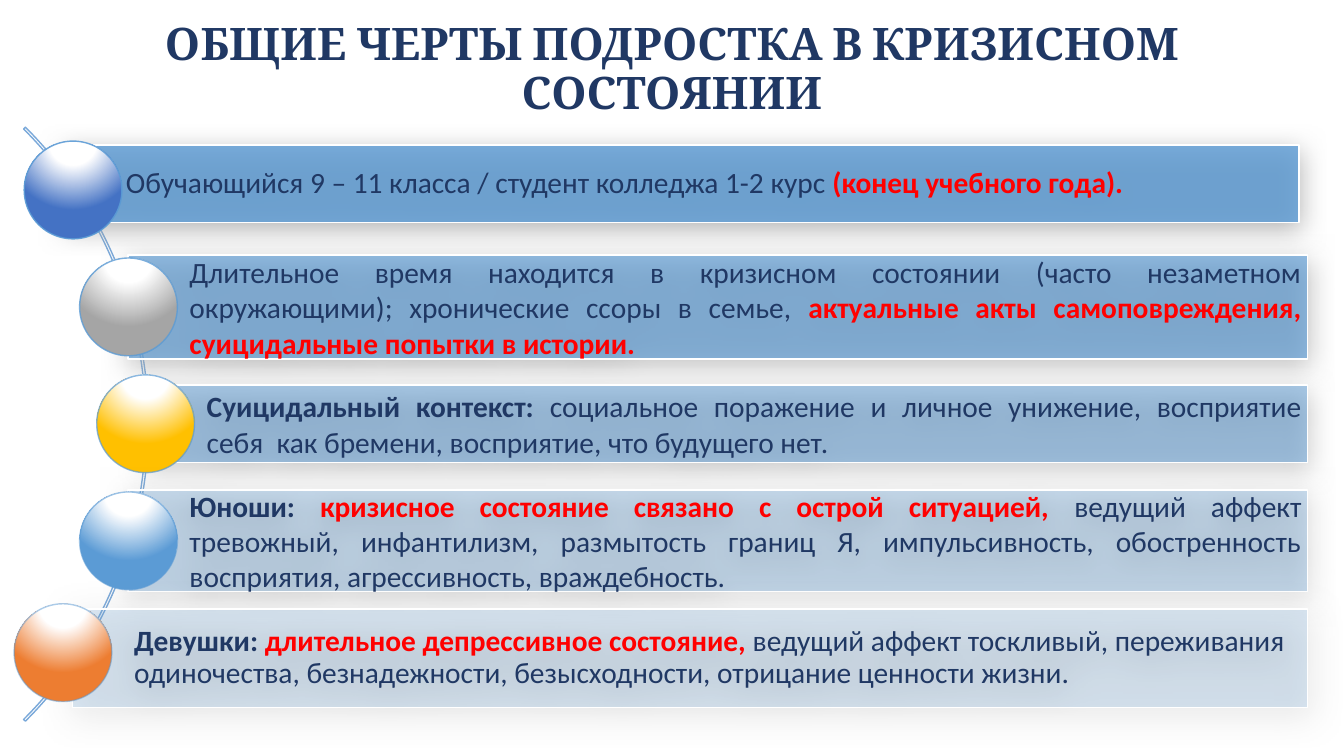
from dataclasses import dataclass

from pptx import Presentation
from pptx.dml.color import RGBColor
from pptx.enum.shapes import MSO_SHAPE
from pptx.enum.text import MSO_ANCHOR, MSO_AUTO_SIZE, PP_ALIGN
from pptx.oxml import parse_xml
from pptx.oxml.ns import nsdecls, qn
from pptx.shapes.autoshape import Shape
from pptx.slide import Slide
from pptx.util import Pt


@dataclass(frozen=True)
class Theme:
    ink: str = "203864"
    edge: str = "333F50"
    hot: str = "FF0000"
    blue: str = "5B9BD5"
    arc: str = "7AA9DA"
    white: str = "FFFFFF"
    shade: str = "A6A6A6"
    head: str = "Cambria"
    body: str = "Calibri"
    big: float = 32
    small: float = 21


@dataclass(frozen=True)
class Piece:
    text: str
    bold: bool = False
    hot: bool = False


@dataclass(frozen=True)
class Trait:
    bar: tuple[float, float, float, float]
    ball: tuple[float, float]
    color: str
    alpha: int
    blur: float
    full: bool
    words: tuple[Piece, ...]


LOOK = Theme()
BALL = 69.84
TRAITS = (
    Trait((46, 103.7, 882, 55.4), (17.3, 100.8), "4472C4", 80, 19, False, (
        Piece("Обучающийся 9 – 11 класса / студент колледжа 1-2 курс "),
        Piece("(конец учебного года).", True, True))),
    Trait((91.4, 182.2, 842.4, 74.2), (56.9, 184.3), "A5A5A5", 65, 19, True, (
        Piece("Длительное время находится в кризисном состоянии (часто незаметном "
              "окружающими); хронические ссоры в семье, "),
        Piece("актуальные акты самоповреждения, суицидальные попытки в истории.",
              True, True))),
    Trait((103.7, 275, 830.2, 55.4), (69.1, 267.8), "FFC000", 50, 19, True, (
        Piece("Суицидальный контекст: ", True),
        Piece("социальное поражение и личное унижение, восприятие себя  как бремени, "
              "восприятие, что будущего нет."))),
    Trait((91.4, 349.9, 842.4, 72.7), (56.9, 351.4), "5B9BD5", 30, 20, True, (
        Piece("Юноши: ", True),
        Piece("кризисное состояние связано с острой ситуацией, ", True, True),
        Piece("ведущий аффект тревожный, инфантилизм, размытость границ Я, "
              "импульсивность, обостренность восприятия, агрессивность, враждебность."))),
    Trait((51.8, 434.9, 882, 70.6), (10.1, 431.3), "ED7D31", 20, 25, False, (
        Piece("Девушки: ", True),
        Piece("длительное депрессивное состояние, ", True, True),
        Piece("ведущий аффект тоскливый, переживания одиночества, безнадежности, "
              "безысходности, отрицание ценности жизни."))),
)


def apply(target: object, form: dict) -> None:
    for name, value in form.items():
        setattr(target, name, value)


def rgb(code: str) -> RGBColor:
    return RGBColor.from_string(code)


def fade(fill, alpha: int) -> None:
    """Set the opacity, in percent, of a solid fill."""
    tone = fill._xPr.find(qn("a:solidFill"))[0]
    tone.append(parse_xml(f'<a:alpha {nsdecls("a")} val="{alpha * 1000}"/>'))


def add_run(para, piece: Piece, face: str, size: float) -> None:
    run = para.add_run()
    run.text = piece.text
    apply(run.font, {"name": face, "size": Pt(size), "bold": piece.bold})
    run.font.color.rgb = rgb(LOOK.hot if piece.hot else LOOK.ink)
    if not piece.hot:
        run.font._element.insert(0, parse_xml(
            f'<a:ln {nsdecls("a")} w="9525"><a:solidFill>'
            f'<a:srgbClr val="{LOOK.edge}"/></a:solidFill></a:ln>'))


def add_form(slide: Slide, kind: MSO_SHAPE, box: tuple, line: str) -> Shape:
    shape = slide.shapes.add_shape(kind, *map(Pt, box))
    shape.shadow.inherit = False
    shape.line.color.rgb = rgb(line)
    shape.line.width = Pt(1)
    return shape


def add_bar(slide: Slide, trait: Trait) -> None:
    bar = add_form(slide, MSO_SHAPE.RECTANGLE, trait.bar, LOOK.white)
    bar.fill.solid()
    bar.fill.fore_color.rgb = rgb(LOOK.blue)
    fade(bar.fill, trait.alpha)
    bar._element.spPr.find(qn("a:effectLst")).append(parse_xml(
        f'<a:outerShdw {nsdecls("a")} blurRad="{Pt(trait.blur)}" dist="{Pt(4)}" '
        f'dir="5400000" rotWithShape="0"><a:srgbClr val="{LOOK.shade}"/></a:outerShdw>'))
    apply(bar.text_frame, {
        "word_wrap": True, "vertical_anchor": MSO_ANCHOR.MIDDLE,
        "margin_left": Pt(44), "margin_right": Pt(4.2),
        "margin_top": Pt(4.2), "margin_bottom": Pt(4.2)})
    para = bar.text_frame.paragraphs[0]
    apply(para, {"alignment": PP_ALIGN.JUSTIFY if trait.full else PP_ALIGN.LEFT,
                 "line_spacing": 1.0 if trait.full else 0.9})
    for piece in trait.words:
        add_run(para, piece, LOOK.body, LOOK.small)


def add_ball(slide: Slide, trait: Trait, alpha: int) -> None:
    ball = add_form(slide, MSO_SHAPE.OVAL, (*trait.ball, BALL, BALL), LOOK.blue)
    fade(ball.line.fill, alpha)
    stops = ((0, LOOK.white), (35, LOOK.white), (100, trait.color))
    marks = "".join(f'<a:gs pos="{pos * 1000}"><a:srgbClr val="{code}"/></a:gs>'
                    for pos, code in stops)
    ball._element.spPr.find(qn("a:prstGeom")).addnext(parse_xml(
        f'<a:gradFill {nsdecls("a")} rotWithShape="1"><a:gsLst>{marks}</a:gsLst>'
        '<a:path path="circle"><a:fillToRect l="50000" t="-80000" r="50000" b="180000"/>'
        '</a:path></a:gradFill>'))


def add_title(slide: Slide) -> None:
    title = slide.shapes.title
    apply(title, {"left": Pt(20), "top": Pt(21), "width": Pt(920), "height": Pt(59)})
    apply(title.text_frame, {"word_wrap": True, "auto_size": MSO_AUTO_SIZE.NONE,
                             "vertical_anchor": MSO_ANCHOR.MIDDLE})
    para = title.text_frame.paragraphs[0]
    apply(para, {"alignment": PP_ALIGN.CENTER, "line_spacing": 0.9})
    add_run(para, Piece("ОБЩИЕ ЧЕРТЫ ПОДРОСТКА В КРИЗИСНОМ СОСТОЯНИИ", True),
            LOOK.head, LOOK.big)


def main() -> None:
    deck = Presentation()
    apply(deck, {"slide_width": Pt(960), "slide_height": Pt(540)})
    slide = deck.slides.add_slide(deck.slide_layouts[5])
    add_title(slide)

    # Thin arc behind the balls
    arc = add_form(slide, MSO_SHAPE.BLOCK_ARC, (-494, 3, 600, 600), LOOK.arc)
    arc.fill.background()
    for spot, value in enumerate((189, 27, 0.003)):
        arc.adjustments[spot] = value

    # Bars with their balls
    for row, trait in enumerate(TRAITS):
        add_bar(slide, trait)
        add_ball(slide, trait, 90 - 10 * row)

    deck.save("out.pptx")


if __name__ == "__main__":
    main()
